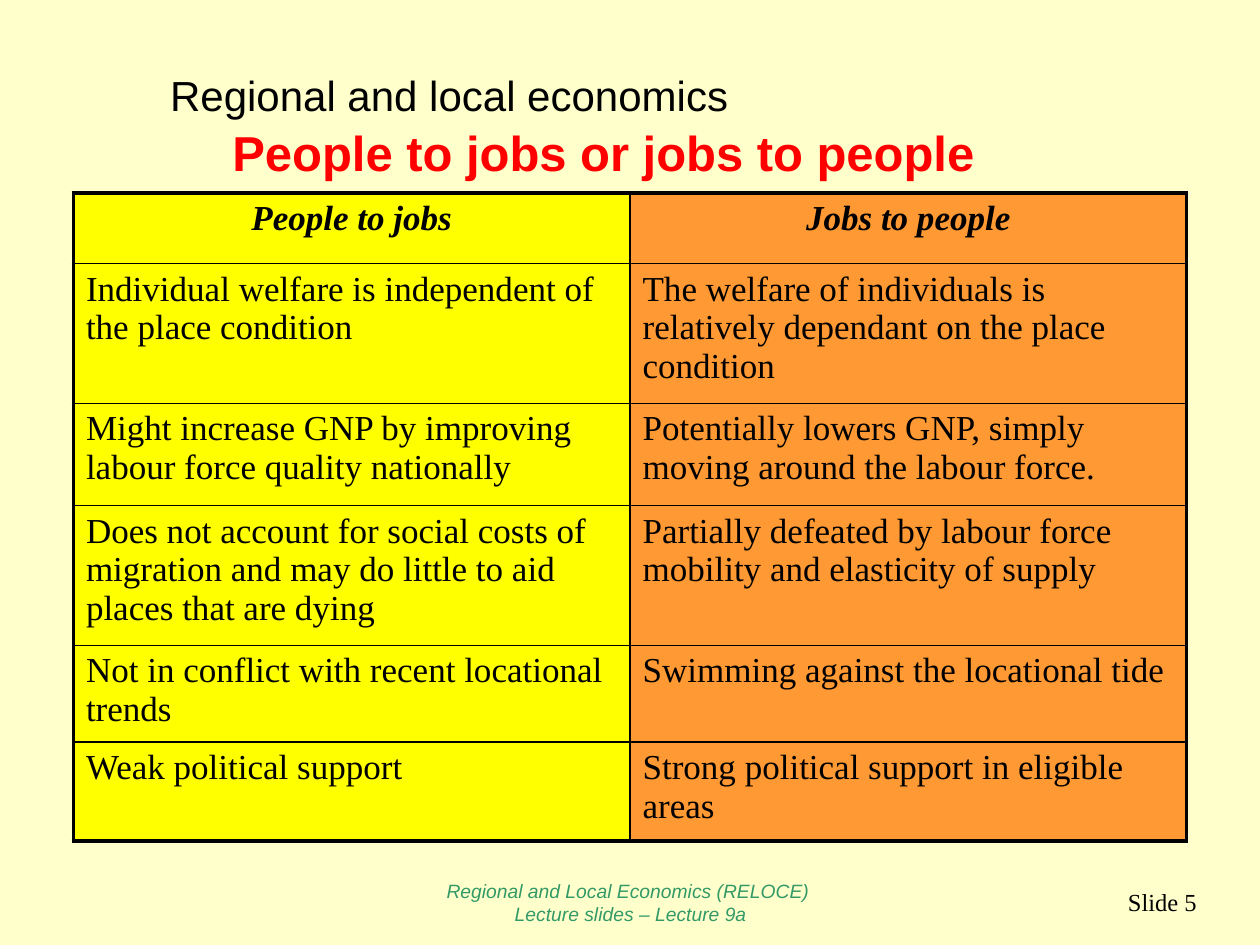
from lxml import etree
from pptx import Presentation
from pptx.dml.color import RGBColor
from pptx.enum.text import MSO_ANCHOR, MSO_AUTO_SIZE, PP_ALIGN
from pptx.oxml.ns import qn
from pptx.util import Cm, Pt

LEFT, CENTER, RIGHT = PP_ALIGN.LEFT, PP_ALIGN.CENTER, PP_ALIGN.RIGHT
TOP, MIDDLE = MSO_ANCHOR.TOP, MSO_ANCHOR.MIDDLE
NO_AUTOFIT = MSO_AUTO_SIZE.NONE

CREAM = RGBColor(0xFF, 0xFF, 0xCC)
YELLOW = RGBColor(0xFF, 0xFF, 0x00)
ORANGE = RGBColor(0xFF, 0x99, 0x33)
RED = RGBColor(0xFF, 0x00, 0x00)
GREEN = RGBColor(0x33, 0x99, 0x66)
BLACK = RGBColor(0x00, 0x00, 0x00)
SANS, SERIF = "Arial", "Times New Roman"

# Content
COURSE = "Regional and local economics"
TITLE = "People to jobs or jobs to people"
FOOTER = ["Regional and Local Economics (RELOCE) ", "Lecture slides – Lecture 9a"]
PAGE_NUMBER = "Slide 5"
ROWS = [
    ("People to jobs", "Jobs to people"),
    ("Individual welfare is independent of the place condition",
     "The welfare of individuals is relatively dependant on the place condition"),
    ("Might increase GNP by improving labour force quality nationally",
     "Potentially lowers GNP, simply moving around the labour force."),
    ("Does not account for social costs of migration and may do little to aid "
     "places that are dying",
     "Partially defeated by labour force mobility and elasticity of supply"),
    ("Not in conflict with recent locational trends",
     "Swimming against the locational tide"),
    ("Weak political support", "Strong political support in eligible areas"),
]
ROW_HEIGHTS = [1.42, 2.82, 2.06, 2.82, 1.95, 1.99]
COLUMN_WIDTH = 11.22
COLUMN_FILLS = [YELLOW, ORANGE]
OUTER_LINE, INNER_LINE = 2.25, 1


def write(frame, lines, font, size, color, align=LEFT, bold=False, italic=False,
          before=0):
    """Fill a text frame with one paragraph per line."""
    for index, line in enumerate(lines):
        para = frame.paragraphs[0] if index == 0 else frame.add_paragraph()
        para.alignment = align
        para.space_before = Pt(before)
        span = para.add_run()
        span.text = line
        span.font.name = font
        span.font.size = Pt(size)
        span.font.bold = bold
        span.font.italic = italic
        span.font.color.rgb = color


def place(box, left, top, width, height, anchor=TOP, wrap=True):
    """Position a text shape and return its frame."""
    box.left, box.top, box.width, box.height = map(Cm, (left, top, width, height))
    frame = box.text_frame
    frame.auto_size = NO_AUTOFIT
    frame.word_wrap = wrap
    frame.vertical_anchor = anchor
    return frame


def add_text(page, *where, **options):
    return place(page.shapes.add_textbox(0, 0, 0, 0), *where, **options)


def set_borders(cell, widths):
    """Draw solid black borders; they must come before the cell's fill."""
    properties = cell._tc.get_or_add_tcPr()
    for position, (side, width) in enumerate(widths.items()):
        line = etree.Element(qn("a:" + side), w=str(Pt(width)))
        fill = etree.SubElement(line, qn("a:solidFill"))
        etree.SubElement(fill, qn("a:srgbClr"), val=str(BLACK))
        properties.insert(position, line)


def add_comparison(page):
    """Build the two-column table with a heavy frame and thin inner lines."""
    last_row, last_column = len(ROWS) - 1, len(COLUMN_FILLS) - 1
    table = page.shapes.add_table(
        len(ROWS), len(COLUMN_FILLS), Cm(1.48), Cm(3.89),
        Cm(COLUMN_WIDTH * len(COLUMN_FILLS)), Cm(sum(ROW_HEIGHTS))).table
    table.horz_banding = False
    for column in table.columns:
        column.width = Cm(COLUMN_WIDTH)
    for r, (texts, height) in enumerate(zip(ROWS, ROW_HEIGHTS)):
        table.rows[r].height = Cm(height)
        header = r == 0
        for c, text in enumerate(texts):
            cell = table.cell(r, c)
            cell.fill.solid()
            cell.fill.fore_color.rgb = COLUMN_FILLS[c]
            on_frame = {"lnL": c == 0, "lnR": c == last_column,
                        "lnT": header, "lnB": r == last_row}
            set_borders(cell, {side: OUTER_LINE if outer else INNER_LINE
                               for side, outer in on_frame.items()})
            write(cell.text_frame, [text], SERIF, 20, BLACK,
                  CENTER if header else LEFT, bold=header, italic=header)


def main():
    deck = Presentation()
    deck.slide_width, deck.slide_height = Cm(25.4), Cm(19.05)
    page = deck.slides.add_slide(deck.slide_layouts[5])
    page.background.fill.solid()
    page.background.fill.fore_color.rgb = CREAM

    # Headings
    write(add_text(page, 3.18, 1.27, 11.89, 1.3, wrap=False),
          [COURSE], SANS, 24, BLACK, before=2)
    write(place(page.shapes.title, 2.54, 2.34, 19.25, 1.45),
          [TITLE], SANS, 28, RED, CENTER, bold=True, before=2)

    # Table
    add_comparison(page)

    # Footer
    write(add_text(page, 8.69, 17.55, 8.05, 1.27, anchor=MIDDLE),
          FOOTER, SANS, 11, GREEN, CENTER, italic=True)
    write(add_text(page, 19.05, 17.55, 5.33, 1.27, anchor=MIDDLE),
          [PAGE_NUMBER], SERIF, 14, BLACK, RIGHT)

    deck.save("out.pptx")


if __name__ == "__main__":
    main()
